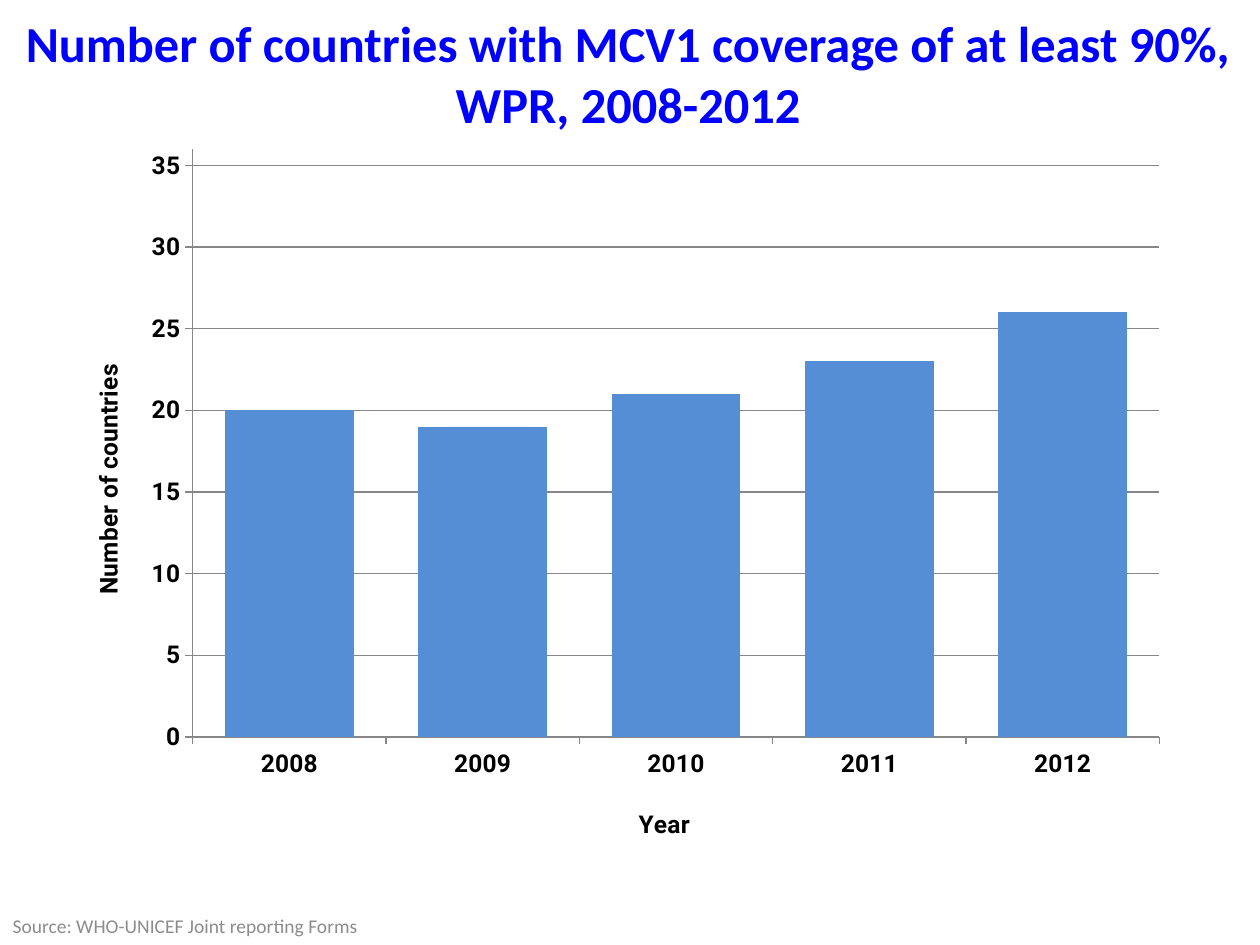
from lxml.etree import SubElement
from pptx import Presentation
from pptx.chart.data import CategoryChartData
from pptx.dml.color import RGBColor
from pptx.enum.chart import XL_CHART_TYPE as ChartType, XL_TICK_MARK as TickMark
from pptx.enum.text import MSO_ANCHOR as Anchor, MSO_AUTO_SIZE as AutoSize, PP_ALIGN as Align
from pptx.oxml.ns import qn
from pptx.util import Pt

COUNTRIES_BY_YEAR = {"2008": 20, "2009": 19, "2010": 21, "2011": 23, "2012": 26}
AXIS_GREY = "878787"


def color(hex_string):
    return RGBColor.from_string(hex_string)


def set_font(font, name, size, hex_string, bold=False):
    font.name, font.size, font.bold = name, Pt(size), bold
    font.color.rgb = color(hex_string)


def fill_placeholder(holder, box, text, size, hex_string, align, anchor, bold=False):
    holder.left, holder.top, holder.width, holder.height = map(Pt, box)
    frame = holder.text_frame
    frame.text = text
    frame.word_wrap = True
    frame.auto_size = AutoSize.NONE
    frame.vertical_anchor = anchor
    para = frame.paragraphs[0]
    para.alignment = align
    set_font(para.runs[0].font, "Calibri", size, hex_string, bold)


def place_part(part, index, **fractions):
    """Fix a chart part at fractions of the chart area."""
    layout = part.find(qn("c:layout"))
    if layout is None:
        layout = part.makeelement(qn("c:layout"))
        part.insert(index, layout)
    manual = SubElement(layout, qn("c:manualLayout"))
    if "w" in fractions:
        SubElement(manual, qn("c:layoutTarget"), val="inner")
    for side in ("x", "y"):
        SubElement(manual, qn(f"c:{side}Mode"), val="edge")
    for name, value in fractions.items():
        SubElement(manual, qn(f"c:{name}"), val=str(value))


def format_axis(axis, title, x, y):
    axis.major_tick_mark = TickMark.OUTSIDE
    axis.minor_tick_mark = TickMark.NONE
    axis.format.line.color.rgb = color(AXIS_GREY)
    axis.format.line.width = Pt(0.75)
    frame = axis.axis_title.text_frame
    frame.text = title
    set_font(frame.paragraphs[0].runs[0].font, "Roboto", 14, "000000", True)
    place_part(axis.axis_title._element, 1, x=x, y=y)


def add_country_chart(page, box):
    data = CategoryChartData()
    data.categories = list(COUNTRIES_BY_YEAR)
    data.add_series("Series 1", list(COUNTRIES_BY_YEAR.values()))
    chart = page.shapes.add_chart(ChartType.COLUMN_CLUSTERED, *map(Pt, box), data).chart
    chart.has_legend = False
    chart.has_title = False
    set_font(chart.font, "Roboto", 14, "000000", True)

    plot = chart.plots[0]
    plot.gap_width = 50
    plot.vary_by_categories = False
    fill = plot.series[0].format.fill
    fill.solid()
    fill.fore_color.rgb = color("558ED5")

    format_axis(chart.category_axis, "Year", 0.51, 0.92)
    counts = chart.value_axis
    format_axis(counts, "Number of countries", 0.02, 0.31)
    counts.minimum_scale, counts.maximum_scale, counts.major_unit = 0, 36, 5
    counts.has_major_gridlines = True
    grid = counts.major_gridlines.format.line
    grid.color.rgb = color(AXIS_GREY)
    grid.width = Pt(0.75)

    plot_area = chart.element.find(".//" + qn("c:plotArea"))
    place_part(plot_area, 0, x=0.115, y=0.02, w=0.865, h=0.81)


def build_coverage_slide(deck):
    page = deck.slides.add_slide(deck.slide_layouts[0])
    title, source = page.placeholders
    fill_placeholder(title, (-2, 0, 722, 83),
                     "Number of countries with MCV1 coverage of at least 90%, WPR, 2008-2012",
                     28.8, "0000FF", Align.CENTER, Anchor.MIDDLE, bold=True)
    fill_placeholder(source, (0, 519, 218, 21), "Source: WHO-UNICEF Joint reporting Forms",
                     11.1, "8C8C8C", Align.LEFT, Anchor.TOP)
    add_country_chart(page, (36.7, 77, 638.6, 414.7))


def main():
    deck = Presentation()
    deck.slide_width, deck.slide_height = Pt(720), Pt(540)
    build_coverage_slide(deck)
    deck.save("out.pptx")


if __name__ == "__main__":
    main()
